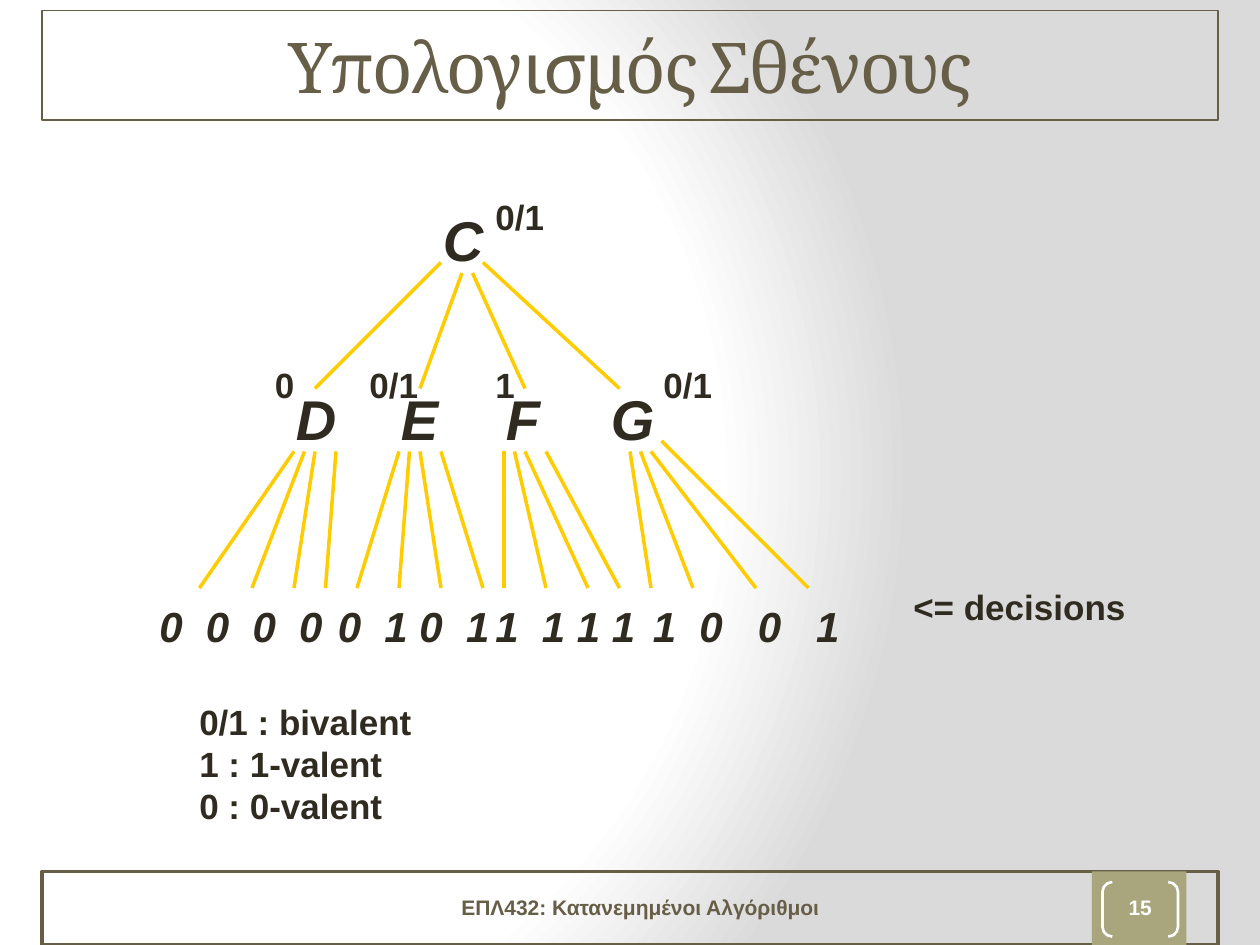
from lxml import etree
from pptx import Presentation, util as u
from pptx.dml.color import RGBColor
from pptx.enum import shapes, text
from pptx.oxml import parse_xml
from pptx.oxml.ns import nsdecls, qn

COLORS = {"brown": "675E47", "olive": "A9A57C", "ink": "2F2B20",
          "gold": "FFCC00", "white": "FFFFFF", "grey": "DADADA"}
STEP = 25.4 / 120
FRAME = {"word_wrap": True, "vertical_anchor": text.MSO_ANCHOR.TOP,
         "auto_size": text.MSO_AUTO_SIZE.NONE}
MIDDLE = {"vertical_anchor": text.MSO_ANCHOR.MIDDLE}
HUG = {"word_wrap": False, "auto_size": text.MSO_AUTO_SIZE.SHAPE_TO_FIT_TEXT}
CENTER = text.PP_ALIGN.CENTER


def grid(*counts):
    return [u.Cm(STEP * count) for count in counts]


def write(shape, lines, color, font, frame={}, align=text.PP_ALIGN.LEFT):
    for name, value in {**FRAME, **frame}.items():
        setattr(shape.text_frame, name, value)
    shape.text_frame.text = "\n".join(lines)
    for paragraph in shape.text_frame.paragraphs:
        paragraph.alignment = align
        run = paragraph.runs[0]
        for name, value in {"name": "Arial", "bold": True, **font}.items():
            setattr(run.font, name, value)
        run.font.color.rgb = RGBColor.from_string(COLORS[color])
    return shape


deck = Presentation()
deck.slide_width, deck.slide_height = u.Cm(25.4), u.Cm(19.05)
slide = deck.slides.add_slide(deck.slide_layouts[5])

stops = "".join(f'<a:gs pos="{place}"><a:srgbClr val="{COLORS[color]}"/></a:gs>'
                for place, color in [(0, "white"), (75000, "white"), (100000, "grey")])
slide.element.cSld.insert(0, parse_xml(
    f'<p:bg {nsdecls("p", "a")}><p:bgPr><a:gradFill rotWithShape="1">'
    f'<a:gsLst>{stops}</a:gsLst><a:path path="circle">'
    '<a:fillToRect l="20000" t="50000" r="100000" b="50000"/></a:path>'
    '</a:gradFill><a:effectLst/></p:bgPr></p:bg>'))

title = slide.shapes.title
title.left, title.top, title.width, title.height = grid(4, 1, 112, 10.4)
title.line.color.rgb = RGBColor.from_string(COLORS["brown"])
title.line.width = u.Pt(1)
write(title, ["Υπολογισμός Σθένους"], "brown",
      {"name": "Cambria", "size": u.Pt(40), "bold": False}, MIDDLE, CENTER)
title.text_frame.paragraphs[0].runs[0].font._element.set("spc", "-100")

PRESET = shapes.MSO_SHAPE
footer_parts = [
    (PRESET.RECTANGLE, (4, 83, 112, 7), None, "brown", 2),
    (PRESET.RECTANGLE, (104, 83, 9, 7), "olive", None, 0),
    (PRESET.DOUBLE_BRACKET, (105, 84, 7.2, 5.2), None, "white", 1.5),
]
for preset, box, fill, outline, weight in footer_parts:
    part = slide.shapes.add_shape(preset, *grid(*box))
    part.shadow.inherit = False
    if fill:
        part.fill.solid()
        part.fill.fore_color.rgb = RGBColor.from_string(COLORS[fill])
    else:
        part.fill.background()
    if outline:
        part.line.color.rgb = RGBColor.from_string(COLORS[outline])
        part.line.width = u.Pt(weight)
    else:
        part.line.fill.background()

page_number = part
page_number.adjustments[0] = 0.18
no_margins = {f"margin_{side}": 0 for side in ("left", "top", "right", "bottom")}
write(page_number, ["15"], "white", {"size": u.Pt(12)}, {**MIDDLE, **no_margins}, CENTER)
page_number.text_frame.paragraphs[0].line_spacing = 0.8

course = slide.shapes.add_textbox(*grid(35, 84, 52, 4.8))
write(course, ["ΕΠΛ432: Κατανεμημένοι Αλγόριθμοι"], "brown", {"size": u.Pt(12)}, MIDDLE, CENTER)

branches = {
    "C": [(42, 25, 30, 37), (44, 26, 40, 37), (45, 26, 50, 37), (46, 25, 59, 37)],
    "D": [(28, 43, 19, 56), (29, 43, 24, 56), (30, 43, 28, 56), (32, 43, 31, 56)],
    "E": [(38, 43, 34, 56), (39, 43, 38, 56), (40, 43, 42, 56), (42, 43, 46, 56)],
    "F": [(48, 43, 48, 56), (49, 43, 52, 56), (50, 43, 56, 56), (52, 43, 59, 56)],
    "G": [(60, 43, 62, 56), (61, 43, 66, 56), (62, 43, 72, 56), (63, 42, 77, 56)],
}
for edges in branches.values():
    family = slide.shapes.add_group_shape()
    for ends in edges:
        edge = family.shapes.add_connector(shapes.MSO_CONNECTOR.STRAIGHT, *grid(*ends))
        edge.line.color.rgb = RGBColor.from_string(COLORS["gold"])
        edge.line.width = u.Pt(2)
        etree.SubElement(edge._element.spPr, qn("a:effectLst"))

configurations = [("C", 41, 19, 6.2), ("D", 27, 36, 7), ("E", 37, 36, 6),
                  ("F", 47, 36, 5.6), ("G", 57, 36, 6.6)]
for name, left, top, width in configurations:
    node = slide.shapes.add_textbox(*grid(left, top, width, 7.6))
    write(node, [name], "ink", {"size": u.Pt(32), "italic": True}, HUG)

DIGIT, SPACE = 0.47, 0.235
decisions = [(14, "0000", (2, 2, 2)), (31, "0101", (2, 1, 2)),
             (46, "1111", (2, 1, 1)), (61, "1001", (2, 3, 3))]
for left, values, gaps in decisions:
    leaves = slide.shapes.add_textbox(*grid(left, 56, 24, 6))
    write(leaves, ["\t".join(values)], "ink", {"size": u.Pt(24), "italic": True},
          {"margin_top": u.Cm(0.25)})
    tabs = etree.SubElement(leaves.text_frame.paragraphs[0]._p.get_or_add_pPr(), qn("a:tabLst"))
    place = 0
    for gap in gaps:
        place += DIGIT + gap * SPACE
        etree.SubElement(tabs, qn("a:tab"), pos=str(int(u.Cm(place))), algn="l")

annotations = [
    (["<= decisions"], 85.8, 55.2, 22.6, 5.2),
    (["0/1 : bivalent", "1 : 1-valent", "0 : 0-valent"], 17.8, 66.1, 22.6, 13.2),
    (["0/1"], 46, 18, 7.1, 5.2),
    (["0"], 25, 34, 4.3, 5.2),
    (["0/1"], 34, 34, 7.1, 5.2),
    (["1"], 46, 34, 4.3, 5.2),
    (["0/1"], 62, 34, 7.1, 5.2),
]
for lines, *box in annotations:
    write(slide.shapes.add_textbox(*grid(*box)), lines, "ink", {"size": u.Pt(20)}, HUG)

deck.save("out.pptx")
